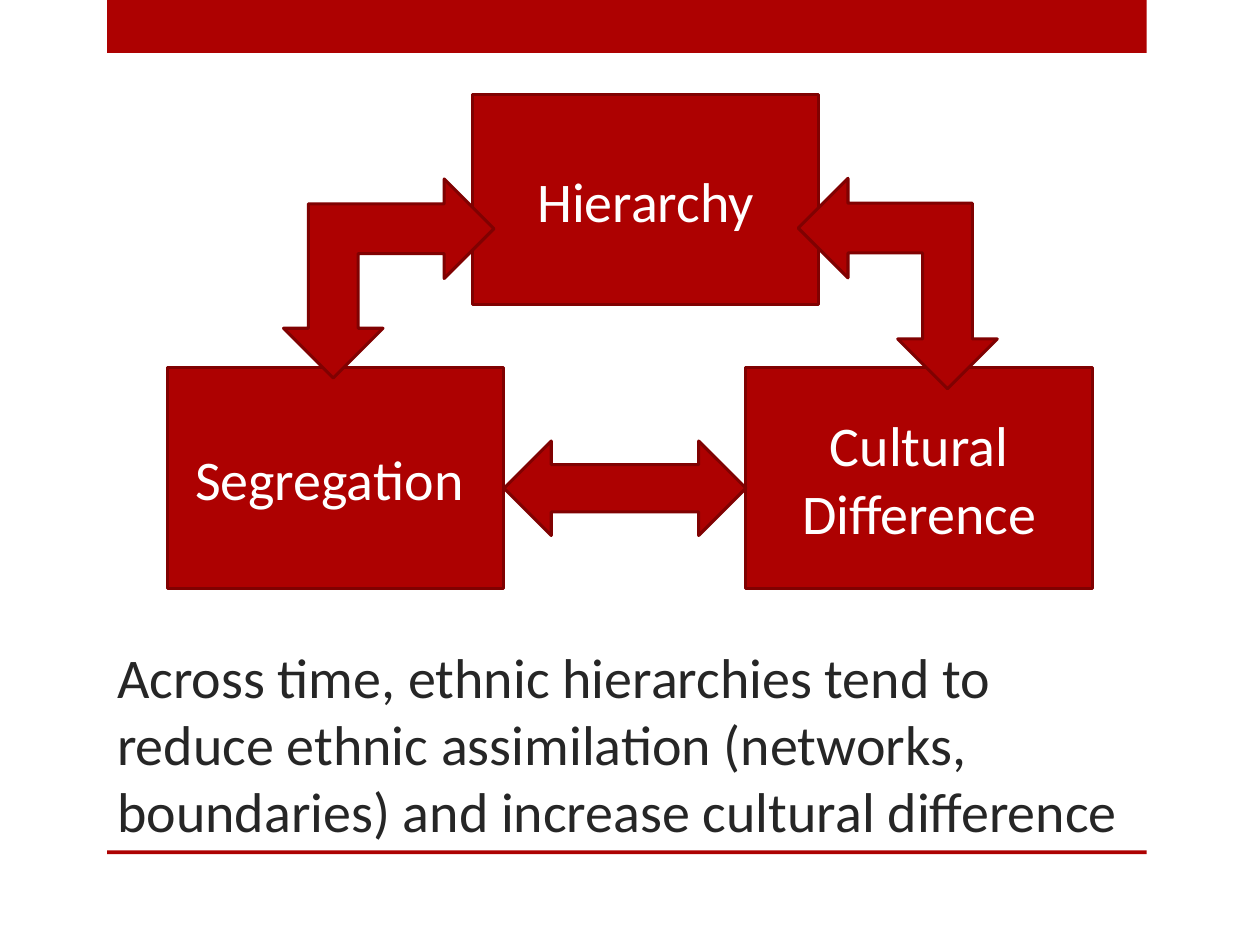
import pptx
import pptx.dml.color
import pptx.enum.shapes
import pptx.enum.text
import pptx.util

Inches = pptx.util.Inches
SHAPE = pptx.enum.shapes.MSO_SHAPE
ALIGN = pptx.enum.text.PP_ALIGN
ANCHOR = pptx.enum.text.MSO_ANCHOR

THEME = {
    "red": "AD0101",
    "outline": "800101",
    "dark": "262626",
    "white": "FFFFFF",
    "font": "Calibri",
    "size": 32,
    "line": 1.75,
}

TITLE = ("Across time, ethnic hierarchies tend to reduce ethnic assimilation "
         "(networks, boundaries) and increase cultural difference")
TITLE_BOX = (0.83, 5.17, 8.42, 1.58)

# Each box is left, top, width, height in inches.
BARS = [(0.85, 0, 8.25, 0.42), (0.85, 6.75, 8.25, 0.03)]
CONCEPTS = [
    ("Hierarchy", (3.75, 0.75, 2.75, 1.67)),
    ("Segregation ", (1.33, 2.92, 2.67, 1.75)),
    ("Cultural Difference", (5.92, 2.92, 2.75, 1.75)),
]
ARROWS = [
    (SHAPE.LEFT_UP_ARROW, (2.25, 1.42, 1.67, 1.58), 180),
    (SHAPE.LEFT_UP_ARROW, (6.29, 1.46, 1.67, 1.58), 270),
    (SHAPE.LEFT_RIGHT_ARROW, (4, 3.5, 1.92, 0.75), 0),
]


def color(name):
    return pptx.dml.color.RGBColor.from_string(THEME[name])


def write_text(shape, text, ink="white", align=ALIGN.CENTER, anchor=ANCHOR.MIDDLE):
    frame = shape.text_frame
    frame.word_wrap = True
    frame.auto_size = pptx.enum.text.MSO_AUTO_SIZE.NONE
    frame.vertical_anchor = anchor
    paragraph = frame.paragraphs[0]
    paragraph.alignment = align
    run = paragraph.add_run()
    run.text = text
    run.font.name = THEME["font"]
    run.font.size = pptx.util.Pt(THEME["size"])
    run.font.color.rgb = color(ink)


def add_block(slide, kind, box, outlined=True, rotation=0):
    shape = slide.shapes.add_shape(kind, *map(Inches, box))
    shape.shadow.inherit = False
    shape.rotation = rotation
    shape.fill.solid()
    shape.fill.fore_color.rgb = color("red")
    if outlined:
        shape.line.color.rgb = color("outline")
        shape.line.width = pptx.util.Pt(THEME["line"])
    else:
        shape.line.fill.background()
    return shape


def main():
    presentation = pptx.Presentation()
    presentation.slide_width = Inches(10)
    presentation.slide_height = Inches(7.5)
    slide = presentation.slides.add_slide(presentation.slide_layouts[5])

    title = slide.shapes.title
    title.left, title.top, title.width, title.height = map(Inches, TITLE_BOX)
    write_text(title, TITLE, ink="dark", align=ALIGN.LEFT, anchor=ANCHOR.BOTTOM)

    for box in BARS:
        add_block(slide, SHAPE.RECTANGLE, box, outlined=False)
    for label, box in CONCEPTS:
        write_text(add_block(slide, SHAPE.RECTANGLE, box), label)
    for kind, box, rotation in ARROWS:
        add_block(slide, kind, box, rotation=rotation)

    presentation.save("out.pptx")


if __name__ == "__main__":
    main()
